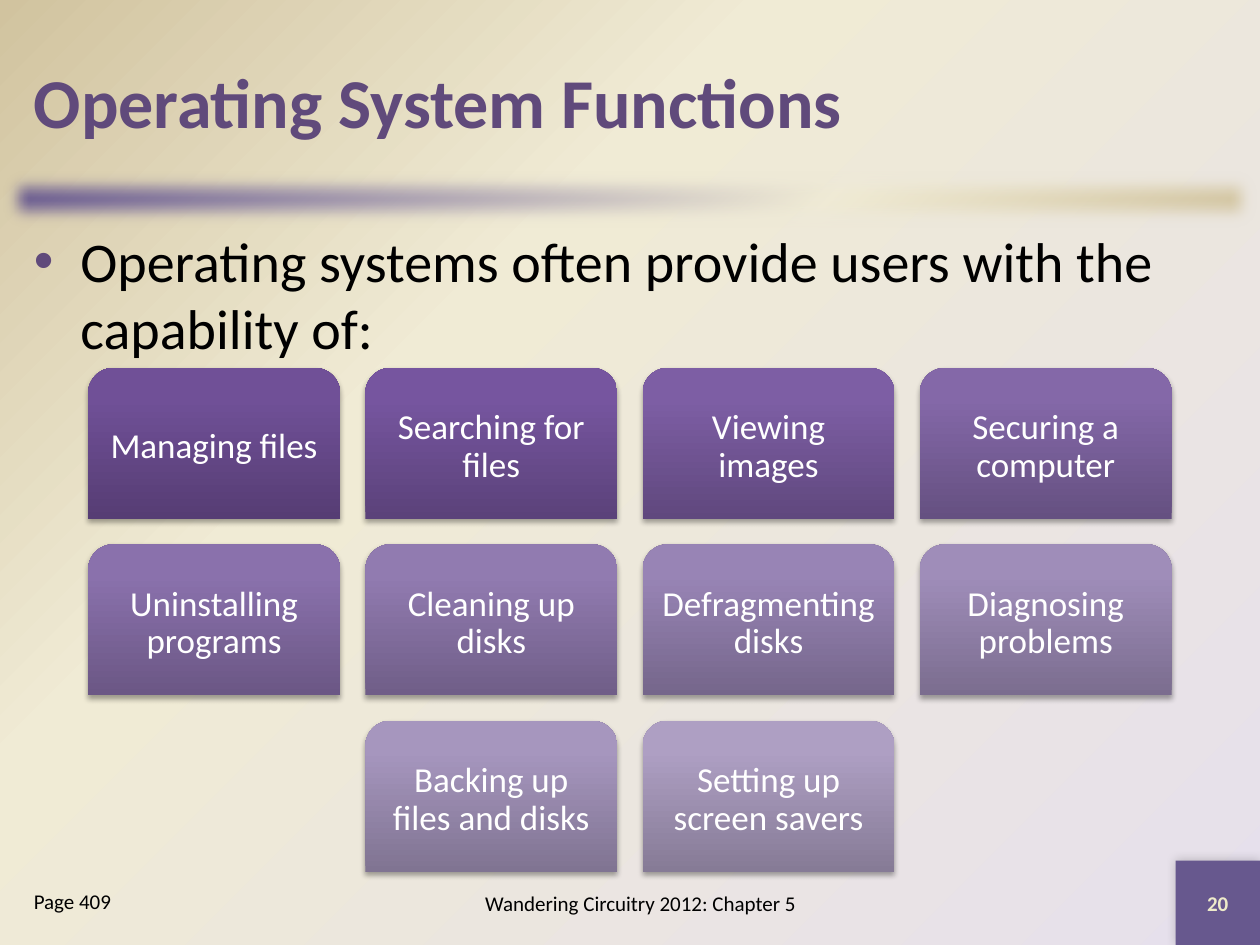
"""Build the Operating System Functions slide with its grid of ten function cards."""
from lxml.etree import SubElement
from pptx import Presentation
from pptx.dml.color import RGBColor
from pptx.enum.shapes import MSO_SHAPE
from pptx.enum.text import MSO_ANCHOR, PP_ALIGN
from pptx.oxml.ns import qn
from pptx.util import Inches, Pt

COLORS = {
    "violet": "67588E", "heading": "604A7B", "cream": "F0EBD5", "sand": "D1C39F",
    "lilac": "E6E0EC", "number": "EEEBCA", "black": "000000", "white": "FFFFFF",
}


def set_gradient(fill, properties, stops, angle=None):
    fill.gradient()
    gradient = properties.find(qn("a:gradFill"))
    for child in list(gradient):
        gradient.remove(child)
    stop_list = SubElement(gradient, qn("a:gsLst"))
    for position, color in stops:
        stop = SubElement(stop_list, qn("a:gs"), pos=str(position * 1000))
        SubElement(stop, qn("a:srgbClr"), val=color)
    if angle is None:
        circle = SubElement(gradient, qn("a:path"), {"path": "circle"})
        SubElement(circle, qn("a:fillToRect"), l="100000", t="100000")
    else:
        SubElement(gradient, qn("a:lin"), ang=str(angle * 60000), scaled="0")


def add_text(frame, text, size, color, bold=False, align=PP_ALIGN.LEFT, anchor=MSO_ANCHOR.MIDDLE):
    frame.word_wrap = True
    frame.vertical_anchor = anchor
    paragraph = frame.paragraphs[0]
    paragraph.alignment = align
    run = paragraph.add_run()
    run.text = text
    run.font.name = "Calibri"
    run.font.size = Pt(size)
    run.font.bold = bold
    run.font.color.rgb = RGBColor.from_string(COLORS[color])
    return paragraph


deck = Presentation()
deck.slide_width, deck.slide_height = Inches(10), Inches(7.5)
slide = deck.slides.add_slide(deck.slide_layouts[6])
shapes = slide.shapes

backdrop = slide.background.fill
backdrop.solid()
set_gradient(backdrop, slide.element.find(".//" + qn("p:bgPr")),
             [(0, COLORS["lilac"]), (65, COLORS["cream"]), (100, COLORS["sand"])])

divider = shapes.add_shape(MSO_SHAPE.RECTANGLE, Inches(0), Inches(1.33), Inches(10), Inches(0.5))
set_gradient(divider.fill, divider.element.spPr,
             [(0, COLORS["violet"]), (65, COLORS["cream"]), (100, COLORS["sand"])], 45)
divider.line.fill.background()
divider.shadow.inherit = False
SubElement(divider.element.spPr.find(qn("a:effectLst")), qn("a:softEdge"), rad=str(Pt(10)))

corner = shapes.add_shape(MSO_SHAPE.RECTANGLE, Inches(9.33), Inches(6.83), Inches(0.67), Inches(0.67))
corner.fill.solid()
corner.fill.fore_color.rgb = RGBColor.from_string(COLORS["violet"])
corner.line.fill.background()
add_text(corner.text_frame, "20", 12, "number", True, PP_ALIGN.CENTER)

title = shapes.add_textbox(Inches(0.17), Inches(0.17), Inches(9.67), Inches(1.25))
add_text(title.text_frame, "Operating System Functions", 40, "heading", True)

body = shapes.add_textbox(Inches(0.17), Inches(1.75), Inches(9.67), Inches(5.08))
lead = add_text(body.text_frame, "Operating systems often provide users with the capability of:",
                32, "black", anchor=MSO_ANCHOR.TOP)
lead_format = lead._p.get_or_add_pPr()
lead_format.set("marL", str(Inches(0.37)))
lead_format.set("indent", str(Inches(-0.37)))
SubElement(SubElement(lead_format, qn("a:buClr")), qn("a:srgbClr"), val=COLORS["heading"])
SubElement(lead_format, qn("a:buFont"), typeface="Arial")
SubElement(lead_format, qn("a:buChar"), char="•")

footer = shapes.add_textbox(Inches(3), Inches(6.92), Inches(4.17), Inches(0.5))
add_text(footer.text_frame, "Wandering Circuitry 2012: Chapter 5", 12, "black", align=PP_ALIGN.CENTER)

page = shapes.add_textbox(Inches(0.17), Inches(7), Inches(1.83), Inches(0.5))
add_text(page.text_frame, "Page 409", 12, "black", anchor=MSO_ANCHOR.TOP)

card_rows = [
    (0, [("Managing files", "563D74", "705097", "704F99"),
         ("Searching for files", "5B427A", "76559F", "7654A1"),
         ("Viewing images", "60487E", "7D5EA4", "7D5DA6"),
         ("Securing a computer", "655081", "8468A8", "8467AA")]),
    (0, [("Uninstalling programs", "6B5785", "8A71AC", "8B71AE"),
         ("Cleaning up disks", "705E88", "917BB0", "927AB2"),
         ("Defragmenting disks", "75668B", "9884B5", "9984B7"),
         ("Diagnosing problems", "7B6D8F", "9F8DB9", "A08DBB")]),
    (1, [("Backing up files and disks", "807492", "A696BE", "A796C0"),
         ("Setting up screen savers", "867B96", "AE9FC3", "AE9FC4")]),
]
shadows = [(corner, 20, 6, 0, 225)]
for row, (first_column, functions) in enumerate(card_rows):
    for column, (label, *tones) in enumerate(functions, first_column):
        card = shapes.add_shape(MSO_SHAPE.ROUND_2_SAME_RECTANGLE, Inches(0.7 + 2.2 * column),
                                Inches(2.92 + 1.4 * row), Inches(2), Inches(1.2))
        set_gradient(card.fill, card.element.spPr, zip((0, 80, 100), tones), 270)
        card.line.fill.background()
        frame = card.text_frame
        frame.margin_left = frame.margin_right = Inches(0.08)
        frame.margin_top = frame.margin_bottom = Inches(0.08)
        add_text(frame, label, 20, "white", align=PP_ALIGN.CENTER).line_spacing = 0.9
        shadows.append((card, 35, 3.1, 1.8, 90))

for shape, opacity, blur, distance, direction in shadows:
    shape.shadow.inherit = False
    shadow = SubElement(shape.element.spPr.find(qn("a:effectLst")), qn("a:outerShdw"),
                        blurRad=str(Pt(blur)), dist=str(Pt(distance)),
                        dir=str(direction * 60000), rotWithShape="0")
    shade = SubElement(shadow, qn("a:srgbClr"), val=COLORS["black"])
    SubElement(shade, qn("a:alpha"), val=str(opacity * 1000))

deck.save("out.pptx")
